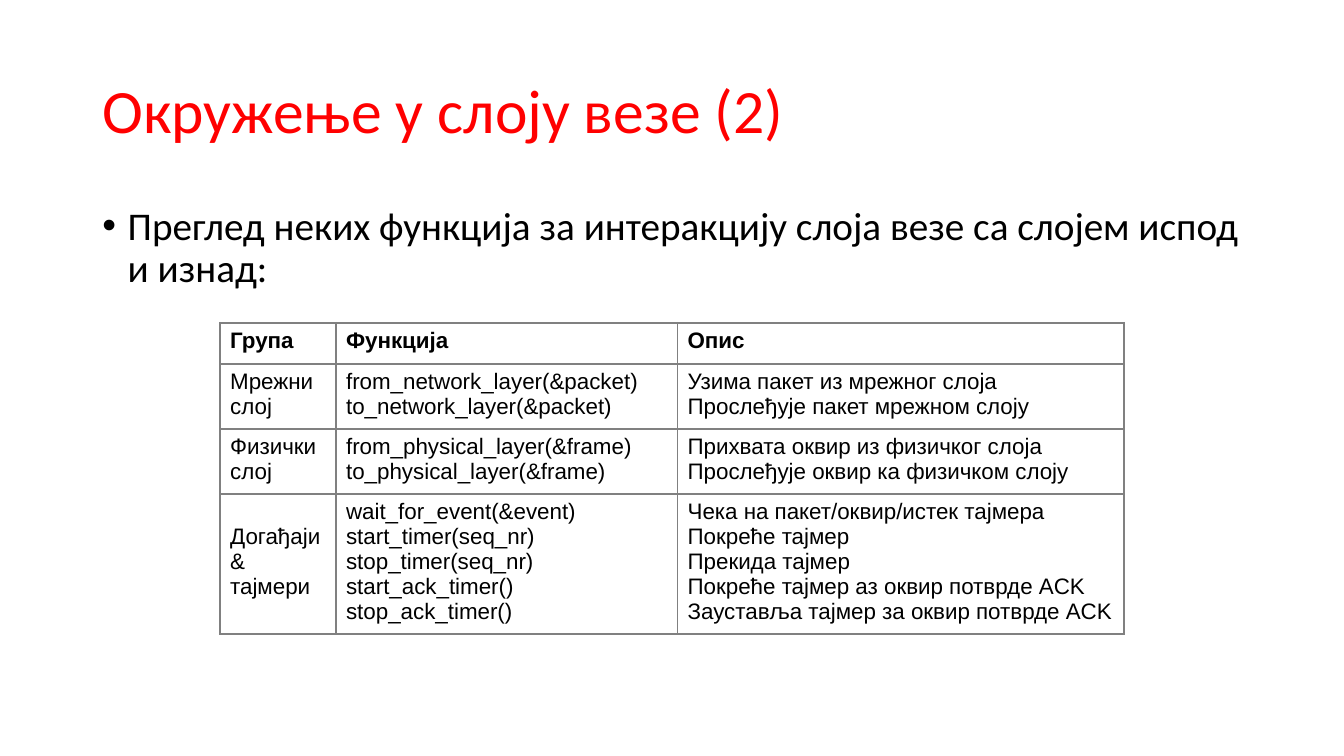
from dataclasses import dataclass

from lxml import etree
from pptx import Presentation
from pptx.dml.color import RGBColor
from pptx.enum.text import MSO_ANCHOR, MSO_AUTO_SIZE, PP_ALIGN
from pptx.oxml.ns import qn
from pptx.util import Pt

LEFT = PP_ALIGN.LEFT
TOP, MIDDLE = MSO_ANCHOR.TOP, MSO_ANCHOR.MIDDLE
NO_AUTOFIT = MSO_AUTO_SIZE.NONE

RED, BLACK, GRAY = "FF0000", "000000", "808080"
COLUMN_WIDTHS = (82.8, 244, 319)
BORDER_WIDTH = 1.5


@dataclass(frozen=True)
class FunctionGroup:
    group: str
    functions: tuple[str, ...]
    descriptions: tuple[str, ...]
    height: float
    header: bool = False


GROUPS = (
    FunctionGroup("Група", ("Функција",), ("Опис",), 29.5, header=True),
    FunctionGroup(
        "Мрежни слој",
        ("from_network_layer(&packet)", "to_network_layer(&packet)"),
        ("Узима пакет из мрежног слоја", "Прослеђује пакет мрежном слоју"),
        46.5,
    ),
    FunctionGroup(
        "Физички слој",
        ("from_physical_layer(&frame)", "to_physical_layer(&frame)"),
        ("Прихвата оквир из физичког слоја", "Прослеђује оквир ка физичком слоју"),
        46.5,
    ),
    FunctionGroup(
        "Догађаји& тајмери",
        (
            "wait_for_event(&event)",
            "start_timer(seq_nr)",
            "stop_timer(seq_nr)",
            "start_ack_timer()",
            "stop_ack_timer()",
        ),
        (
            "Чека на пакет/оквир/истек тајмера",
            "Покреће тајмер",
            "Прекида тајмер",
            "Покреће тајмер аз оквир потврде ACK",
            "Зауставља тајмер за оквир потврде ACK",
        ),
        100,
    ),
)


def rgb(value: str) -> RGBColor:
    return RGBColor.from_string(value)


def write(frame, lines: tuple[str, ...], *, size: float, font: str,
          color: str = BLACK, bold: bool = False, line_spacing: float = 1.0,
          space_before: float = 0) -> None:
    """Fill a text frame with one left-aligned paragraph per line."""
    frame.word_wrap = True
    for index, line in enumerate(lines):
        paragraph = frame.paragraphs[0] if index == 0 else frame.add_paragraph()
        paragraph.alignment = LEFT
        paragraph.line_spacing = line_spacing
        paragraph.space_before = Pt(space_before)
        run = paragraph.add_run()
        run.text = line
        run.font.size = Pt(size)
        run.font.name = font
        run.font.bold = bold
        run.font.color.rgb = rgb(color)


def place(shape, left: float, top: float, width: float, height: float) -> None:
    shape.left, shape.top = Pt(left), Pt(top)
    shape.width, shape.height = Pt(width), Pt(height)


def add_bullet(paragraph, indent: float) -> None:
    properties = paragraph._p.get_or_add_pPr()
    properties.set("marL", str(Pt(indent)))
    properties.set("indent", str(Pt(-indent)))
    etree.SubElement(properties, qn("a:buFont")).set("typeface", "Arial")
    etree.SubElement(properties, qn("a:buChar")).set("char", "•")


def draw_borders(cell) -> None:
    properties = cell._tc.get_or_add_tcPr()
    for index, side in enumerate(("lnL", "lnR", "lnT", "lnB")):
        line = etree.Element(qn(f"a:{side}"), w=str(Pt(BORDER_WIDTH)))
        fill = etree.SubElement(line, qn("a:solidFill"))
        etree.SubElement(fill, qn("a:srgbClr")).set("val", GRAY)
        properties.insert(index, line)


def add_function_table(slide, left: float, top: float) -> None:
    height = sum(group.height for group in GROUPS)
    table = slide.shapes.add_table(
        len(GROUPS), len(COLUMN_WIDTHS),
        Pt(left), Pt(top), Pt(sum(COLUMN_WIDTHS)), Pt(height),
    ).table
    table.first_row = table.horz_banding = False
    for column, width in zip(table.columns, COLUMN_WIDTHS):
        column.width = Pt(width)
    for row, group in zip(table.rows, GROUPS):
        row.height = Pt(group.height)
        contents = ((group.group,), group.functions, group.descriptions)
        for index, (cell, lines) in enumerate(zip(row.cells, contents)):
            cell.margin_left = cell.margin_right = cell.margin_bottom = Pt(7.2)
            cell.margin_top = Pt(3.6)
            cell.vertical_anchor = MIDDLE if index == 0 and not group.header else TOP
            cell.fill.background()
            draw_borders(cell)
            write(cell.text_frame, lines, size=16, font="Arial", bold=group.header)


def main() -> None:
    presentation = Presentation()
    presentation.slide_width, presentation.slide_height = Pt(960), Pt(540)
    slide = presentation.slides.add_slide(presentation.slide_layouts[1])

    title, overview = slide.placeholders
    place(title, 66, 28.75, 828, 104.4)
    title.text_frame.vertical_anchor = MIDDLE
    title.text_frame.auto_size = NO_AUTOFIT
    write(title.text_frame, ("Окружење у слоју везе (2)",),
          size=44, font="Calibri", color=RED, line_spacing=0.9)

    place(overview, 66, 143.75, 828, 342.6)
    overview.text_frame.auto_size = NO_AUTOFIT
    write(overview.text_frame,
          ("Преглед неких функција за интеракцију слоја везе са слојем испод и изнад:",),
          size=28, font="Calibri", line_spacing=0.9, space_before=10)
    add_bullet(overview.text_frame.paragraphs[0], indent=18)

    add_function_table(slide, 157.2, 230.6)
    presentation.save("out.pptx")


if __name__ == "__main__":
    main()
